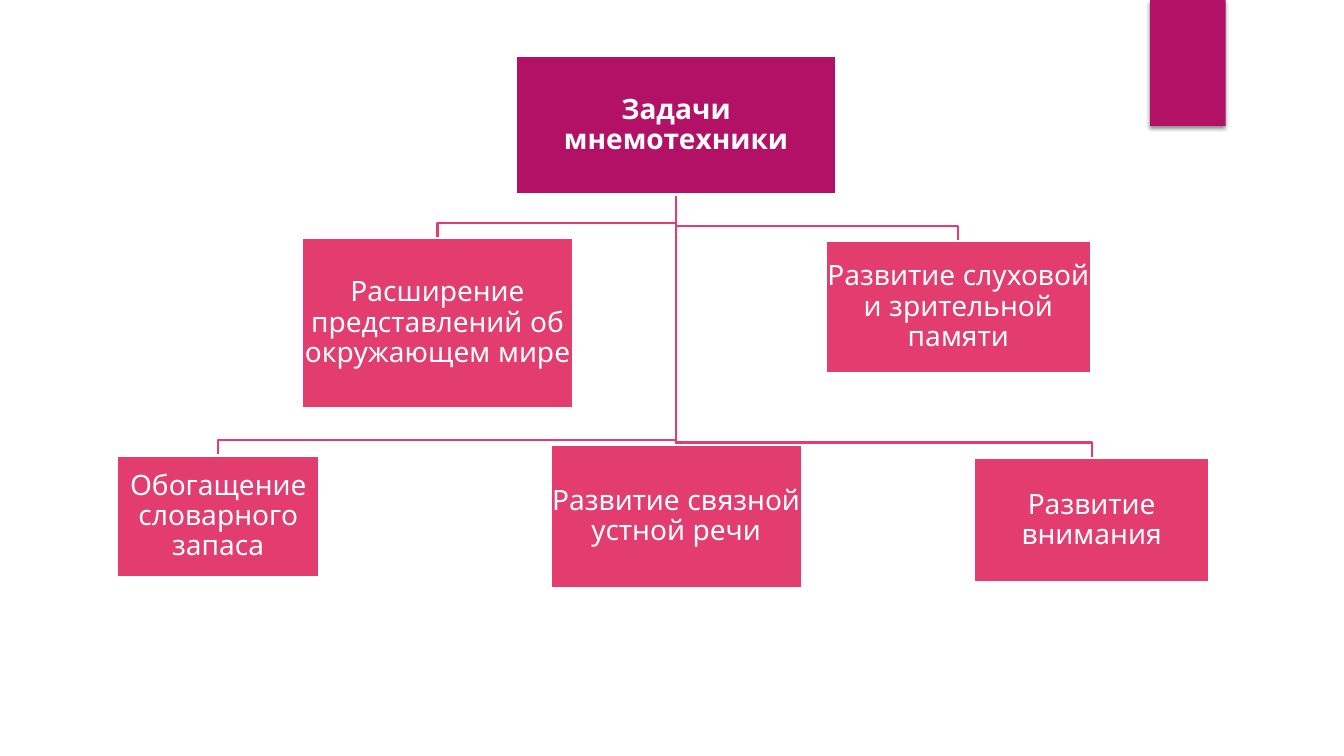
from lxml.etree import SubElement
from pptx import Presentation
from pptx.dml.color import RGBColor
from pptx.enum.shapes import MSO_CONNECTOR, MSO_SHAPE
from pptx.enum.text import MSO_ANCHOR, PP_ALIGN
from pptx.oxml.ns import qn
from pptx.util import Pt

COLORS = {"berry": "B31166", "pink": "E33D6F", "white": "FFFFFF", "black": "000000"}

# Left, top, width, height in points
ROOT = (368.7, 40.3, 228.4, 98.7)
TASKS = [
    ("Обогащение словарного запаса", (83.5, 325.4, 144.7, 87)),
    ("Расширение представлений об окружающем мире", (216, 170, 193, 121.6)),
    ("Развитие связной устной речи", (393.2, 317.6, 179.4, 102.2)),
    ("Развитие слуховой и зрительной памяти", (589.7, 172.1, 189.6, 94.4)),
    ("Развитие внимания", (695.5, 326.9, 168.5, 89.2)),
]


class TaskChart:
    font = "Quicksand"
    font_size = 20
    line_width = 1.5
    inset = 0.7
    elbow_drop = 10.8

    def __init__(self, slide):
        self.slide = slide

    def color(self, name):
        return RGBColor.from_string(COLORS[name])

    def rectangle(self, bounds, fill):
        shape = self.slide.shapes.add_shape(MSO_SHAPE.RECTANGLE, *map(Pt, bounds))
        shape.shadow.inherit = False
        shape.fill.solid()
        shape.fill.fore_color.rgb = self.color(fill)
        shape.line.fill.background()
        return shape

    def ribbon(self, bounds):
        shape = self.rectangle(bounds, "berry")
        effects = shape._element.spPr.find(qn("a:effectLst"))
        shadow = SubElement(effects, qn("a:outerShdw"), blurRad=str(Pt(3)),
                            dist=str(Pt(2)), dir="5400000", rotWithShape="0")
        shade = SubElement(shadow, qn("a:srgbClr"), val=COLORS["black"])
        SubElement(shade, qn("a:alpha"), val="45000")

    def box(self, text, bounds, fill, bold=False):
        shape = self.rectangle(bounds, fill)
        self.outline(shape, "white")
        frame = shape.text_frame
        frame.word_wrap = True
        frame.vertical_anchor = MSO_ANCHOR.MIDDLE
        frame.margin_left = frame.margin_right = Pt(self.inset)
        frame.margin_top = frame.margin_bottom = Pt(self.inset)
        paragraph = frame.paragraphs[0]
        paragraph.alignment = PP_ALIGN.CENTER
        paragraph.line_spacing = 0.9
        run = paragraph.add_run()
        run.text = text
        run.font.name = self.font
        run.font.size = Pt(self.font_size)
        run.font.bold = bold
        run.font.color.rgb = self.color("white")

    def outline(self, shape, color):
        shape.line.color.rgb = self.color(color)
        shape.line.width = Pt(self.line_width)

    def branch(self, parent, child):
        start_x, start_y = parent[0] + parent[2] / 2, parent[1] + parent[3]
        end_x, end_y = child[0] + child[2] / 2, child[1]
        if abs(end_x - start_x) < 1:
            shape = self.slide.shapes.add_connector(
                MSO_CONNECTOR.STRAIGHT, *map(Pt, (start_x, start_y, start_x, end_y)))
            SubElement(shape._element.spPr, qn("a:effectLst"))
        else:
            bend_y = end_y - self.elbow_drop
            builder = self.slide.shapes.build_freeform(Pt(start_x), Pt(start_y))
            corners = [(start_x, bend_y), (end_x, bend_y), (end_x, end_y)]
            builder.add_line_segments([(Pt(x), Pt(y)) for x, y in corners], close=False)
            shape = builder.convert_to_shape()
            shape.shadow.inherit = False
            shape.fill.background()
        self.outline(shape, "pink")


def main():
    presentation = Presentation()
    presentation.slide_width, presentation.slide_height = Pt(960), Pt(540)
    chart = TaskChart(presentation.slides.add_slide(presentation.slide_layouts[6]))

    # Corner ribbon
    chart.ribbon((821.5, 0, 54, 90))

    # Branches lie behind the boxes
    for text, bounds in reversed(TASKS):
        chart.branch(ROOT, bounds)

    # Heading and tasks
    chart.box("Задачи мнемотехники", ROOT, "berry", bold=True)
    for text, bounds in TASKS:
        chart.box(text, bounds, "pink")

    presentation.save("out.pptx")


if __name__ == "__main__":
    main()
